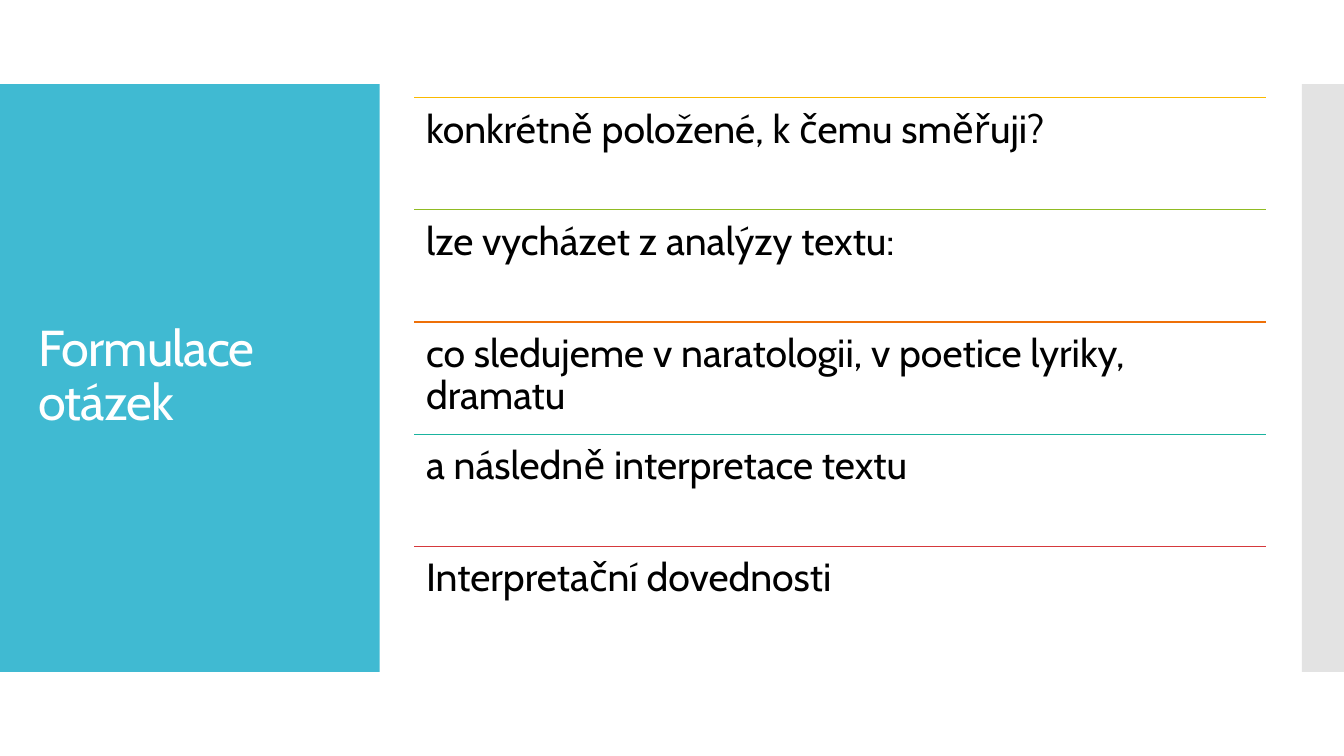
from lxml import etree
from pptx import Presentation
from pptx.dml.color import RGBColor
from pptx.enum.shapes import MSO_CONNECTOR, MSO_SHAPE
from pptx.enum.text import MSO_ANCHOR, MSO_AUTO_SIZE, PP_ALIGN
from pptx.oxml.ns import qn
from pptx.util import Pt

RECT, LINE = MSO_SHAPE.RECTANGLE, MSO_CONNECTOR.STRAIGHT
TOP, MIDDLE = MSO_ANCHOR.TOP, MSO_ANCHOR.MIDDLE
LEFT, NO_FIT = PP_ALIGN.LEFT, MSO_AUTO_SIZE.NONE

# Content
TITLE = "Formulace otázek"
ROWS = [
    ("konkrétně položené, k čemu směřuji?", "yellow"),
    ("lze vycházet z analýzy textu:", "green"),
    ("co sledujeme v naratologii, v poetice lyriky, dramatu", "orange"),
    ("a následně interpretace textu", "teal"),
    ("Interpretační dovednosti", "red"),
]
COLORS = {
    "panel": "40BAD2", "strip": "C8C8C8", "white": "FFFFFF", "black": "000000",
    "yellow": "FAB900", "green": "90BB23", "orange": "EE7008",
    "teal": "1AB39F", "red": "D5393D",
}
FONT = "Cabin"

# Layout in points
SLIDE_W, SLIDE_H = 960, 540
BAND_TOP, BAND_H = 60, 420
PANEL_W, STRIP_W = 271.2, 30
LIST_X, LIST_Y, LIST_W, ROW_H = 296, 69.8, 608.4, 80.1


def rgb(name):
    return RGBColor.from_string(COLORS[name])


def write(sp, text, size, color, anchor=TOP, inset=(7.2, 3.6), spacing=None):
    tf = sp.text_frame
    tf.word_wrap, tf.auto_size, tf.vertical_anchor = True, NO_FIT, anchor
    tf.margin_left = tf.margin_right = Pt(inset[0])
    tf.margin_top = tf.margin_bottom = Pt(inset[1])
    p = tf.paragraphs[0]
    p.alignment, p.line_spacing = LEFT, 0.9
    r = p.add_run()
    r.text = text
    r.font.name, r.font.size, r.font.color.rgb = FONT, Pt(size), rgb(color)
    if spacing is not None:
        r.font._element.set("spc", str(round(spacing * 100)))


def add_band(s, x, width, color, opacity=100):
    sp = s.shapes.add_shape(RECT, Pt(x), Pt(BAND_TOP), Pt(width), Pt(BAND_H))
    sp.shadow.inherit = False
    sp.fill.solid()
    sp.fill.fore_color.rgb = rgb(color)
    sp.line.fill.background()
    if opacity < 100:
        clr = sp._element.spPr.find(".//" + qn("a:srgbClr"))
        etree.SubElement(clr, qn("a:alpha")).set("val", str(opacity * 1000))


def add_row(s, y, text, color):
    line = s.shapes.add_connector(LINE, Pt(LIST_X), Pt(y), Pt(LIST_X + LIST_W), Pt(y))
    line.line.color.rgb, line.line.width = rgb(color), Pt(0.85)
    etree.SubElement(line._element.spPr, qn("a:effectLst"))
    box = s.shapes.add_textbox(Pt(LIST_X), Pt(y), Pt(LIST_W), Pt(ROW_H))
    write(box, text, 28, "black", inset=(8.4, 8.4))


def main():
    prs = Presentation()
    prs.slide_width, prs.slide_height = Pt(SLIDE_W), Pt(SLIDE_H)
    s = prs.slides.add_slide(prs.slide_layouts[5])

    # Side bands
    add_band(s, 0, PANEL_W, "panel")
    add_band(s, SLIDE_W - STRIP_W, STRIP_W, "strip", opacity=50)

    # Title, brought in front of the panel
    title = s.shapes.title
    title.left, title.top, title.width, title.height = Pt(20), Pt(88.6), Pt(232), Pt(362)
    write(title, TITLE, 36, "white", anchor=MIDDLE, spacing=-0.6)
    s.shapes._spTree.append(title._element)

    # Ruled list
    for i, (text, color) in enumerate(ROWS):
        add_row(s, LIST_Y + i * ROW_H, text, color)

    prs.save("out.pptx")


if __name__ == "__main__":
    main()
